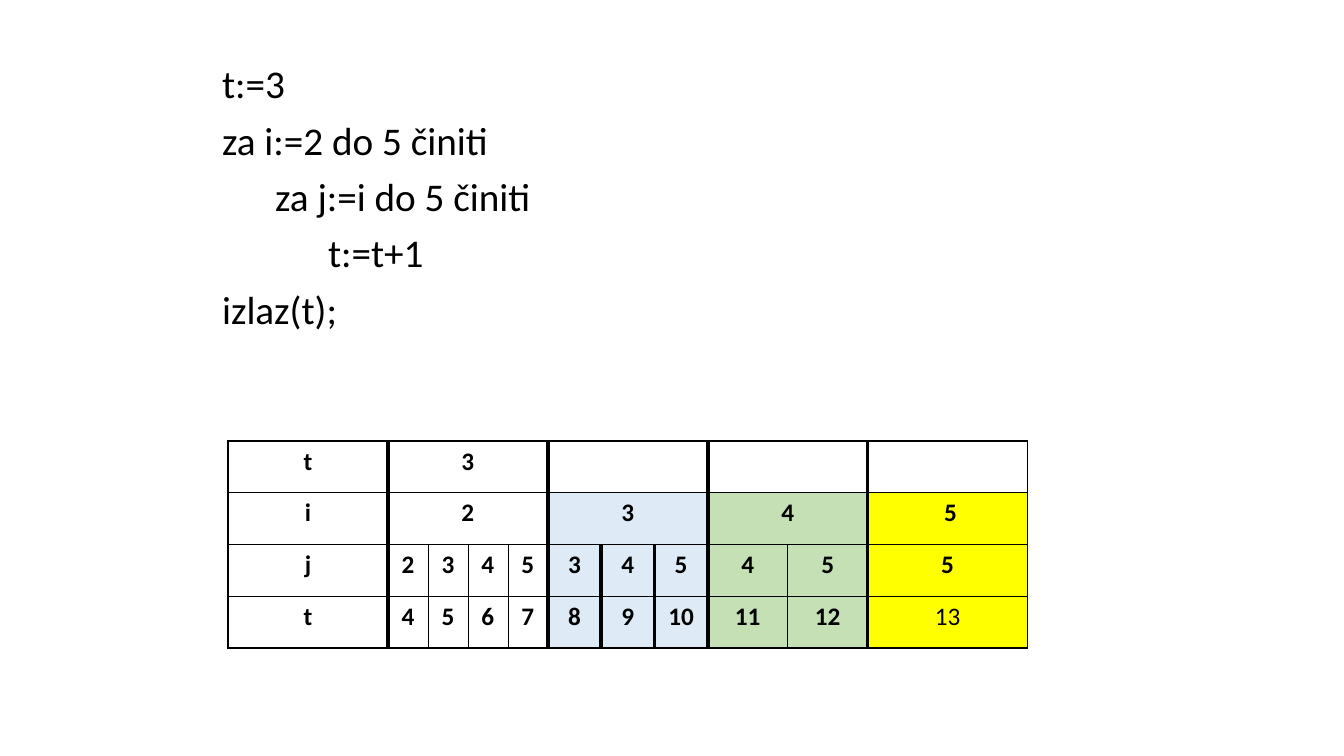
"""Builds a slide that traces a nested loop in a table."""
import dataclasses

import lxml.etree
import pptx
import pptx.dml.color
import pptx.enum.text
import pptx.oxml.ns
import pptx.util


@dataclasses.dataclass(frozen=True)
class Theme:
    font: str = "Calibri"
    ink: str = "000000"
    blue: str = "DEEBF7"
    green: str = "C5E0B4"
    yellow: str = "FFFF00"
    code_size: int = 28
    cell_size: int = 18
    thin: float = 0.5
    normal: float = 1
    thick: float = 3


def px(count):
    return pptx.util.Emu(round(count * 914400 / 100.8))


def apply(target, values):
    for name, value in values.items():
        setattr(target, name, value)


class SlideBuilder:
    def __init__(self, deck, theme):
        self.theme = theme
        self.page = deck.slides.add_slide(deck.slide_layouts[1])
        title = self.page.shapes.title.element
        title.getparent().remove(title)

    def add_text(self, para, text, size, bold=False):
        span = para.add_run()
        span.text = text
        apply(span.font, {"name": self.theme.font, "size": pptx.util.Pt(size), "bold": bold})
        span.font.color.rgb = pptx.dml.color.RGBColor.from_string(self.theme.ink)

    def code(self, lines, left, top, width, height, step):
        box = self.page.placeholders[1]
        apply(box, {"left": px(left), "top": px(top), "width": px(width), "height": px(height)})
        frame = box.text_frame
        apply(frame, {
            "word_wrap": True,
            "auto_size": pptx.enum.text.MSO_AUTO_SIZE.NONE,
            "vertical_anchor": pptx.enum.text.MSO_ANCHOR.TOP,
        })
        for index, (depth, text) in enumerate(lines):
            para = frame.add_paragraph() if index else frame.paragraphs[0]
            apply(para, {
                "line_spacing": 0.9,
                "space_before": pptx.util.Pt(10),
                "space_after": pptx.util.Pt(0),
                "alignment": pptx.enum.text.PP_ALIGN.LEFT,
            })
            self.add_text(para, text, self.theme.code_size)
            properties = para._p.get_or_add_pPr()
            properties.set("marL", str(px(depth * step)))
            properties.set("indent", "0")
            lxml.etree.SubElement(properties, pptx.oxml.ns.qn("a:buNone"))

    def borders(self, cell, left, right):
        properties = cell._tc.get_or_add_tcPr()
        widths = {"L": left, "R": right, "T": self.theme.normal, "B": self.theme.normal}
        for index, (side, width) in enumerate(widths.items()):
            line = lxml.etree.Element(pptx.oxml.ns.qn("a:ln" + side), w=str(pptx.util.Pt(width)))
            fill = lxml.etree.SubElement(line, pptx.oxml.ns.qn("a:solidFill"))
            lxml.etree.SubElement(fill, pptx.oxml.ns.qn("a:srgbClr"), val=self.theme.ink)
            properties.insert(index, line)

    def cell(self, cell, text, fill, left, right, bold=True):
        apply(cell, {"margin_left": px(7), "margin_right": px(7)})
        if fill:
            cell.fill.solid()
            cell.fill.fore_color.rgb = pptx.dml.color.RGBColor.from_string(fill)
        else:
            cell.fill.background()
        self.borders(cell, left, right)
        para = cell.text_frame.paragraphs[0]
        para.alignment = pptx.enum.text.PP_ALIGN.CENTER
        if text:
            self.add_text(para, text, self.theme.cell_size, bold)
        else:
            para.font.size = pptx.util.Pt(self.theme.cell_size)

    def trace(self, groups, left, top, group_width, height):
        theme = self.theme
        total = sum(len(group["columns"]) for group in groups)
        frame = self.page.shapes.add_table(
            4, total, px(left), px(top), px(group_width * len(groups)), px(height))
        table = frame.table
        apply(table, {"first_row": False, "horz_banding": False})
        for row in table.rows:
            row.height = px(height) // 4
        start = 0
        for group in groups:
            columns = group["columns"]
            last = start + len(columns) - 1
            outer_left = theme.thick if start else theme.normal
            outer_right = theme.thick if last < total - 1 else theme.normal
            for row, text in enumerate(group["heads"]):
                fill = group["fill"] if row else None
                for column in range(start, last + 1):
                    label = text if column == start else ""
                    self.cell(table.cell(row, column), label, fill, outer_left, outer_right)
                if last > start:
                    table.cell(row, start).merge(table.cell(row, last))
            for column, values in enumerate(columns, start):
                table.columns[column].width = px(group_width) // len(columns)
                line_left = outer_left if column == start else group["inner"]
                line_right = outer_right if column == last else group["inner"]
                for row, text in enumerate(values, 2):
                    self.cell(table.cell(row, column), text, group["fill"],
                              line_left, line_right, text != "13")
            start = last + 1


def main():
    deck = pptx.Presentation()
    apply(deck, {"slide_width": px(1344), "slide_height": px(756)})
    theme = Theme()
    builder = SlideBuilder(deck, theme)
    builder.code([
        (0, "t:=3"),
        (0, "za i:=2 do 5 činiti"),
        (1, "za j:=i do 5 činiti"),
        (2, "t:=t+1"),
        (0, "izlaz(t);"),
    ], left=212, top=60, width=907, height=499, step=53)
    groups = [
        (("t", "i"), [("j", "t")], None, theme.normal),
        (("3", "2"), [("2", "4"), ("3", "5"), ("4", "6"), ("5", "7")], None, theme.thin),
        (("", "3"), [("3", "8"), ("4", "9"), ("5", "10")], theme.blue, theme.thick),
        (("", "4"), [("4", "11"), ("5", "12")], theme.green, theme.thin),
        (("", " 5"), [("5", "13")], theme.yellow, theme.normal),
    ]
    names = ("heads", "columns", "fill", "inner")
    builder.trace([dict(zip(names, group)) for group in groups],
                  left=228, top=441, group_width=160, height=207)
    deck.save("out.pptx")


if __name__ == "__main__":
    main()
